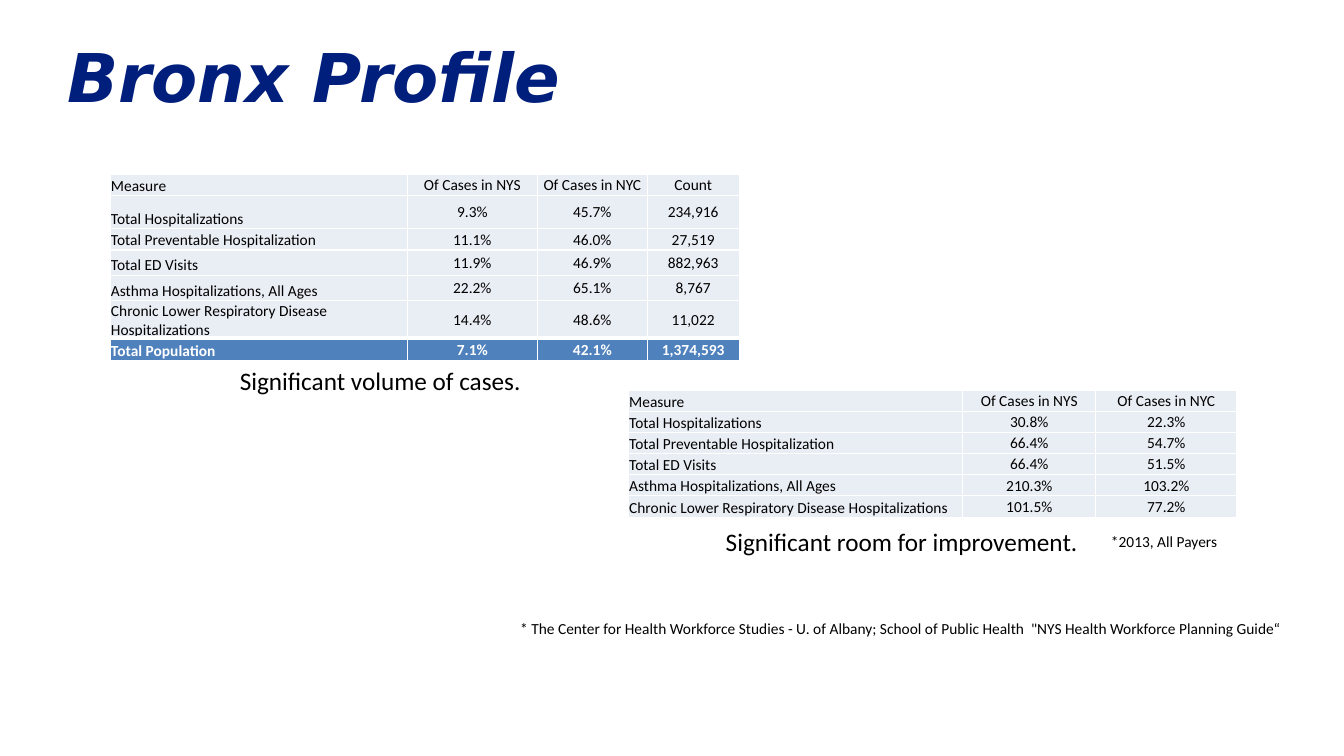
from lxml import etree
from pptx import Presentation
from pptx import util as u
from pptx.dml.color import RGBColor
from pptx.enum import text
from pptx.oxml import ns

W, H = u.Inches(13.33), u.Inches(7.5)
COLORS = {"title": "001E7C", "ink": "000000", "white": "FFFFFF",
          "row": "E9EDF4", "total": "4F81BD"}
MEASURES = ["Total Hospitalizations", "Total Preventable Hospitalization",
            "Total ED Visits", "Asthma Hospitalizations, All Ages",
            "Chronic Lower Respiratory Disease Hospitalizations"]
HEADER = ["Measure", "Of Cases in NYS", "Of Cases in NYC"]
VOLUME = [["9.3%", "45.7%", "234,916"], ["11.1%", "46.0%", "27,519"],
          ["11.9%", "46.9%", "882,963"], ["22.2%", "65.1%", "8,767"],
          ["14.4%", "48.6%", "11,022"]]
TOTAL = ["Total Population", "7.1%", "42.1%", "1,374,593"]
ROOM = [["30.8%", "22.3%"], ["66.4%", "54.7%"], ["66.4%", "51.5%"],
        ["210.3%", "103.2%"], ["101.5%", "77.2%"]]


def across(percent):
    return round(W * percent / 100)


def down(percent):
    return round(H * percent / 100)


def box(x, y, w, h):
    return across(x), down(y), across(w), down(h)


def add_run(p, words, size, color="ink", font="Calibri", bold=False, italic=False):
    r = p.add_run()
    r.text = words
    r.font.size = u.Pt(size)
    r.font.name = font
    r.font.bold = bold
    r.font.italic = italic
    r.font.color.rgb = RGBColor.from_string(COLORS[color])


def set_title(slide, words):
    sp = slide.shapes.title
    sp.left, sp.top, sp.width, sp.height = box(5, 4.13, 90, 11.87)
    tf = sp.text_frame
    tf.margin_left = tf.margin_right = tf.margin_top = tf.margin_bottom = 0
    tf.vertical_anchor = text.MSO_ANCHOR.MIDDLE
    p = tf.paragraphs[0]
    p.alignment = text.PP_ALIGN.LEFT
    add_run(p, words, 48, "title", "DejaVu Sans", True, True)


def add_note(slide, words, place, size):
    tf = slide.shapes.add_textbox(*box(*place)).text_frame
    tf.word_wrap = True
    tf.auto_size = text.MSO_AUTO_SIZE.SHAPE_TO_FIT_TEXT
    add_run(tf.paragraphs[0], words, size)


def add_borders(cell, top):
    tcPr = cell._tc.get_or_add_tcPr()
    for side, width in zip("LRTB", (1, 1, top, 1)):
        ln = etree.SubElement(tcPr, ns.qn(f"a:ln{side}"), w=str(u.Pt(width)))
        fill = etree.SubElement(ln, ns.qn("a:solidFill"))
        etree.SubElement(fill, ns.qn("a:srgbClr"), val=COLORS["white"])


def fill_cell(cell, words, is_label, is_total):
    cell.margin_left = cell.margin_right = cell.margin_top = u.Inches(0.01)
    cell.margin_bottom = 0
    cell.vertical_anchor = text.MSO_ANCHOR.BOTTOM if is_label else text.MSO_ANCHOR.MIDDLE
    add_borders(cell, 3 if is_total else 1)
    cell.fill.solid()
    cell.fill.fore_color.rgb = RGBColor.from_string(COLORS["total" if is_total else "row"])
    p = cell.text_frame.paragraphs[0]
    p.alignment = text.PP_ALIGN.LEFT if is_label else text.PP_ALIGN.CENTER
    add_run(p, words, 11, "white" if is_total else "ink", bold=is_total)


def add_measures(slide, x, y, cols, heights, rows):
    place = box(x, y, sum(cols), sum(heights))
    table = slide.shapes.add_table(len(rows), len(cols), *place).table
    for col, width in zip(table.columns, cols):
        col.width = across(width)
    for row, height in zip(table.rows, heights):
        row.height = down(height)
    for i, values in enumerate(rows):
        for j, words in enumerate(values):
            fill_cell(table.cell(i, j), words, j == 0, values is TOTAL)


def with_measures(values):
    return [[name, *row] for name, row in zip(MEASURES, values)]


def main():
    prs = Presentation()
    prs.slide_width, prs.slide_height = W, H
    slide = prs.slides.add_slide(prs.slide_layouts[5])
    set_title(slide, "Bronx Profile")
    add_note(slide, "* The Center for Health Workforce Studies - U. of Albany; "
             "School of Public Health  \"NYS Health Workforce Planning Guide“",
             (37.96, 81.2, 59.34, 3.87), 11)
    add_note(slide, "Significant room for improvement.", (53.26, 68.93, 50.56, 5.33), 18)
    add_measures(slide, 46.74, 51.6, [24.9, 9.9, 10.5], [2.8] * 5 + [2.93],
                 [HEADER, *with_measures(ROOM)])
    add_measures(slide, 8.18, 23.07, [22.13, 9.68, 8.18, 6.83],
                 [2.8, 4.4, 2.8, 3.33, 3.33, 2.93, 2.93],
                 [HEADER + ["Count"], *with_measures(VOLUME), TOTAL])
    add_note(slide, "Significant volume of cases.", (17.1, 47.6, 50.56, 5.33), 18)
    add_note(slide, "*2013, All Payers", (81.92, 69.73, 10.05, 3.87), 11)
    prs.save("out.pptx")


if __name__ == "__main__":
    main()
